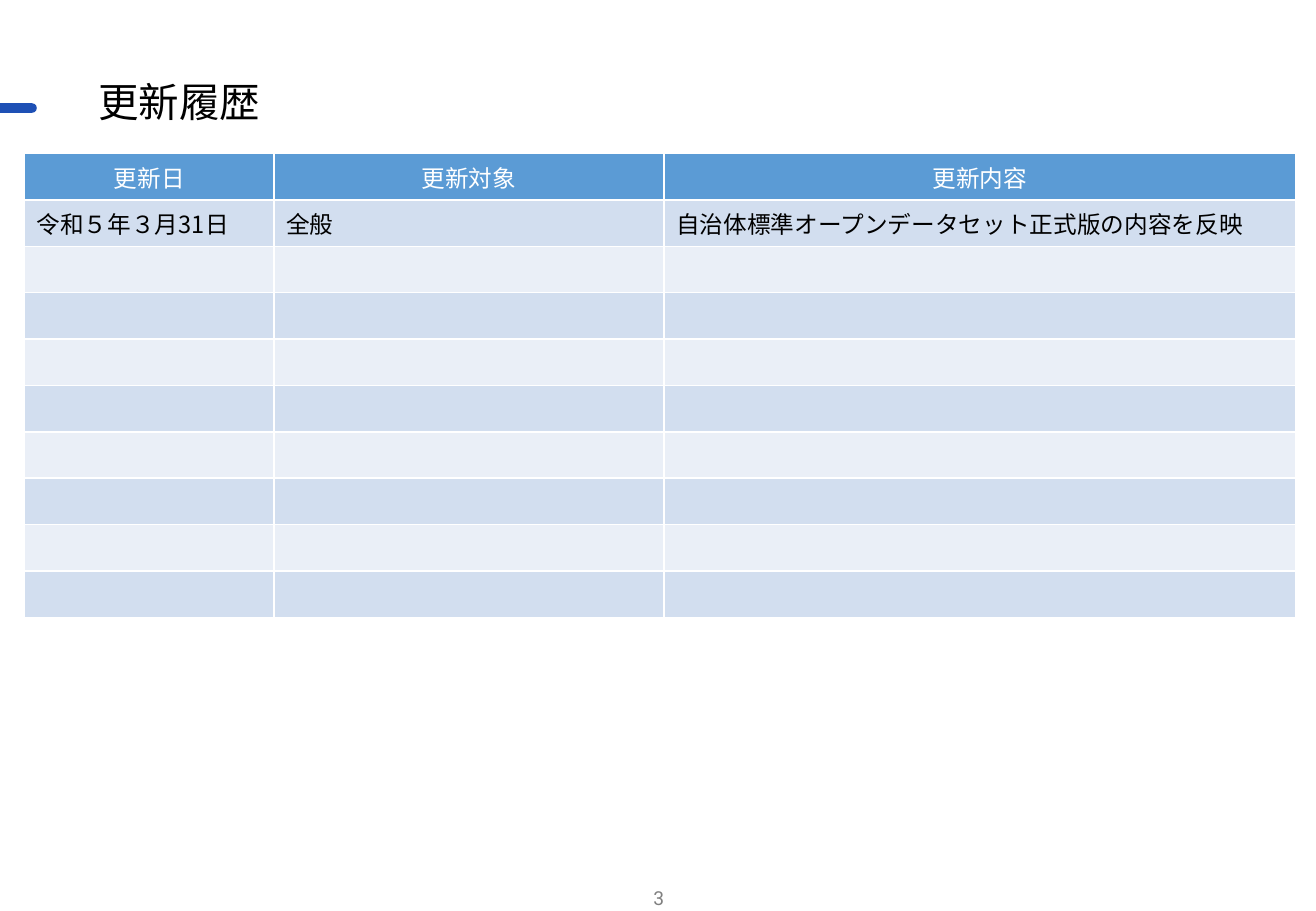
from dataclasses import dataclass

from pptx import Presentation
from pptx.dml.color import RGBColor
from pptx.enum.shapes import MSO_SHAPE
from pptx.enum.text import MSO_ANCHOR, MSO_AUTO_SIZE, PP_ALIGN
from pptx.oxml.ns import qn
from pptx.util import Cm, Pt
from lxml.etree import SubElement

JP_FONT = "Noto Sans CJK JP"
NUMBER_FONT = "Roboto"
ROW_COUNT = 10
ROW_HEIGHT = 0.97
BAND_FILLS = ("EAEFF7", "D2DEEF")


@dataclass
class Column:
    header: str
    width: float
    entry: str


COLUMNS = [
    Column("更新日", 5.22, "令和５年３月31日"),
    Column("更新対象", 8.15, "全般"),
    Column("更新内容", 13.21, "自治体標準オープンデータセット正式版の内容を反映"),
]


def rgb(color: str) -> RGBColor:
    return RGBColor.from_string(color)


def write(tf, text: str, size: float, color: str, font: str = JP_FONT,
          align: PP_ALIGN = PP_ALIGN.LEFT) -> None:
    tf.text = text
    p = tf.paragraphs[0]
    p.alignment = align
    r = p.runs[0]
    r.font.size = Pt(size)
    r.font.bold = False
    r.font.name = font
    r.font.color.rgb = rgb(color)
    SubElement(r.font._element, qn("a:ea"), typeface=font)


def format_cell(cell, fill: str) -> None:
    cell.vertical_anchor = MSO_ANCHOR.MIDDLE
    cell.margin_top = cell.margin_bottom = 0
    tcPr = cell._tc.get_or_add_tcPr()
    for side in ("a:lnL", "a:lnR", "a:lnT", "a:lnB"):
        ln = SubElement(tcPr, qn(side), w=str(Pt(1)))
        SubElement(SubElement(ln, qn("a:solidFill")), qn("a:srgbClr"), val="FFFFFF")
    cell.fill.solid()
    cell.fill.fore_color.rgb = rgb(fill)


def add_history_table(s) -> None:
    width = sum(column.width for column in COLUMNS)
    table = s.shapes.add_table(ROW_COUNT, len(COLUMNS), Cm(0.51), Cm(3.21),
                               Cm(width), Cm(ROW_HEIGHT * ROW_COUNT)).table
    for row in table.rows:
        row.height = Cm(ROW_HEIGHT)
    for c, column in enumerate(COLUMNS):
        table.columns[c].width = Cm(column.width)
        for r in range(ROW_COUNT):
            format_cell(table.cell(r, c), BAND_FILLS[r % 2] if r else "5B9BD5")
        write(table.cell(0, c).text_frame, column.header, 14, "FFFFFF",
              align=PP_ALIGN.CENTER)
        write(table.cell(1, c).text_frame, column.entry, 14, "000000")


def main() -> None:
    prs = Presentation()
    prs.slide_width, prs.slide_height = Cm(27.51), Cm(19.05)
    s = prs.slides.add_slide(prs.slide_layouts[5])

    # Accent bar
    sp = s.shapes.add_shape(MSO_SHAPE.ROUNDED_RECTANGLE,
                            Cm(-0.2), Cm(2.16), Cm(0.97), Cm(0.2))
    sp.adjustments[0] = 0.5
    sp.shadow.inherit = False
    sp.fill.solid()
    sp.fill.fore_color.rgb = rgb("1E50B5")
    sp.line.fill.background()

    # Title
    title = s.shapes.title
    title.left, title.top, title.width, title.height = Cm(1.8), Cm(1.6), Cm(23.72), Cm(1.17)
    tf = title.text_frame
    tf.auto_size = MSO_AUTO_SIZE.NONE
    tf.vertical_anchor = MSO_ANCHOR.MIDDLE
    write(tf, "更新履歴", 24, "000000")
    tf.paragraphs[0].line_spacing = 0.9

    # Update history
    add_history_table(s)

    # Page number
    tf = s.shapes.add_textbox(Cm(10.67), Cm(18.52), Cm(6.2), Cm(0.5)).text_frame
    tf.word_wrap = True
    tf.vertical_anchor = MSO_ANCHOR.MIDDLE
    tf.margin_top = tf.margin_bottom = 0
    write(tf, "3", 11.4, "808080", NUMBER_FONT, PP_ALIGN.CENTER)

    prs.save("out.pptx")


if __name__ == "__main__":
    main()
